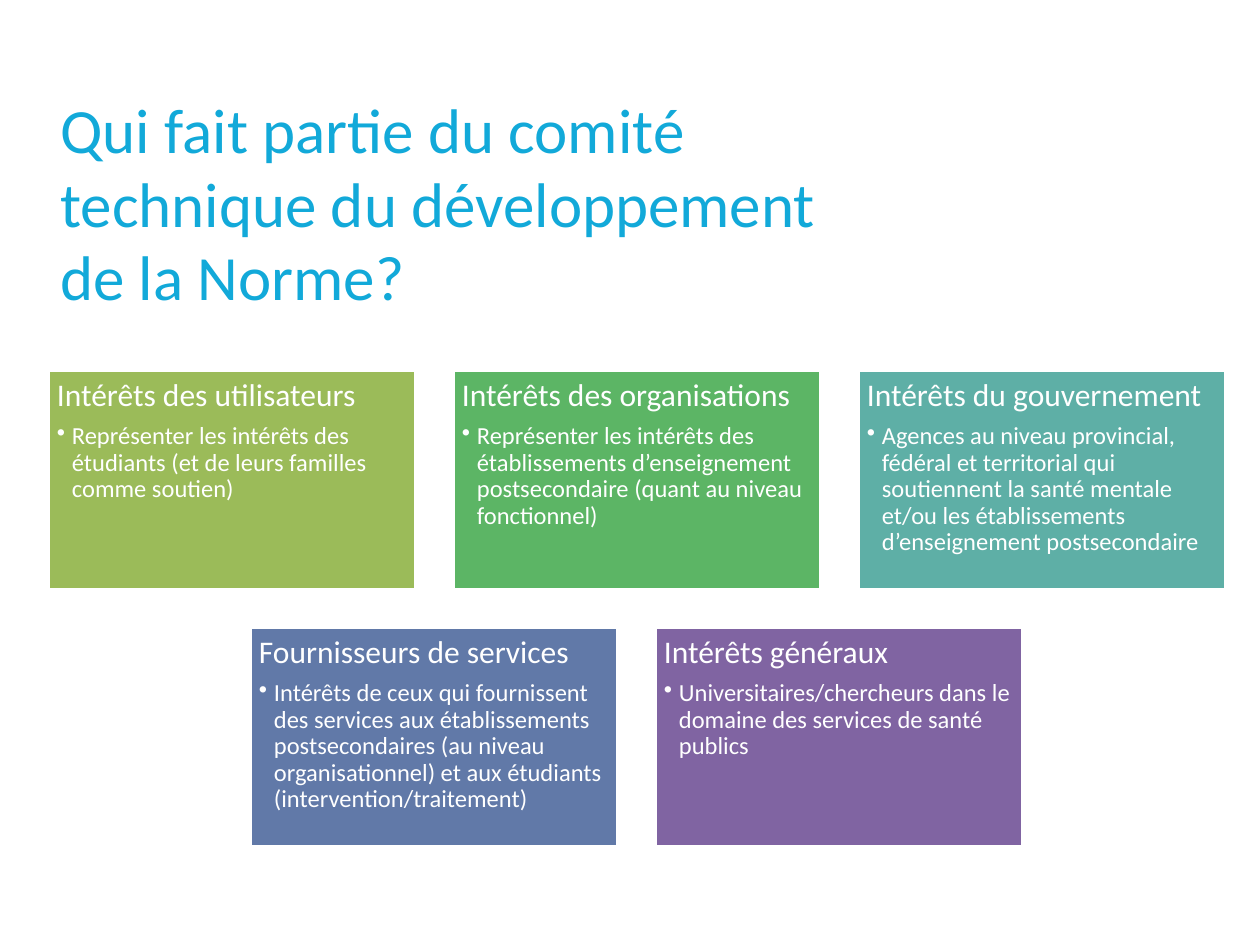
from lxml import etree
from pptx import Presentation
from pptx import util as u
from pptx.dml.color import RGBColor
from pptx.enum import shapes, text
from pptx.oxml.ns import qn

# Content
TITLE = "Qui fait partie du comité technique du développement de la Norme?"
ROWS = [
    [
        ("9BBB59", "Intérêts des utilisateurs",
         "Représenter les intérêts des étudiants (et de leurs familles comme soutien)"),
        ("5CB565", "Intérêts des organisations",
         "Représenter les intérêts des établissements d’enseignement "
         "postsecondaire (quant au niveau fonctionnel)"),
        ("5EAFA6", "Intérêts du gouvernement",
         "Agences au niveau provincial, fédéral et territorial qui soutiennent la santé "
         "mentale et/ou les établissements d’enseignement postsecondaire"),
    ],
    [
        ("6179A8", "Fournisseurs de services",
         "Intérêts de ceux qui fournissent des services aux établissements postsecondaires "
         "(au niveau organisationnel) et aux étudiants (intervention/traitement)"),
        ("8064A2", "Intérêts généraux",
         "Universitaires/chercheurs dans le domaine des services de santé publics"),
    ],
]

# Layout in px
PX = 914400 // 126
LEFT, TOP = 48, 370
CARD_W, CARD_H, GAP = 368, 220, 37
PADDING, INDENT = 9, 15


def px(n):
    return u.Emu(n * PX)


def color(value):
    return RGBColor.from_string(value)


def style(paragraph, size, value):
    paragraph.alignment = text.PP_ALIGN.LEFT
    paragraph.font.name = "Calibri"
    paragraph.font.size = u.Pt(size)
    paragraph.font.color.rgb = color(value)


def add_bullet(paragraph):
    props = paragraph._p.get_or_add_pPr()
    props.set("marL", str(px(INDENT)))
    props.set("indent", str(-px(INDENT)))
    etree.SubElement(props, qn("a:buChar"), char="•")


def add_card(slide, x, y, fill, heading, detail):
    card = slide.shapes.add_shape(
        shapes.MSO_SHAPE.RECTANGLE, px(x), px(y), px(CARD_W), px(CARD_H))
    card.shadow.inherit = False
    card.fill.solid()
    card.fill.fore_color.rgb = color(fill)
    card.line.color.rgb = color("FFFFFF")
    card.line.width = u.Pt(2)
    frame = card.text_frame
    frame.word_wrap = True
    frame.vertical_anchor = text.MSO_ANCHOR.TOP
    frame.margin_left = frame.margin_right = px(PADDING)
    frame.margin_top = frame.margin_bottom = px(PADDING)
    frame.text = f"{heading}\n{detail}"
    heading_line, detail_line = frame.paragraphs
    add_bullet(detail_line)
    for paragraph, size, after in ((heading_line, 18, 6), (detail_line, 14, 2)):
        style(paragraph, size, "FFFFFF")
        paragraph.line_spacing = 0.9
        paragraph.space_after = u.Pt(after)


deck = Presentation()
deck.slide_width, deck.slide_height = px(1260), px(945)
slide = deck.slides.add_slide(deck.slide_layouts[6])

# Title
title = slide.shapes.add_textbox(px(LEFT), px(79), px(819), px(236)).text_frame
title.word_wrap = True
title.vertical_anchor = text.MSO_ANCHOR.BOTTOM
title.margin_bottom = 0
title.text = TITLE
style(title.paragraphs[0], 36, "12A9D9")
title.paragraphs[0].line_spacing = 0.97

# Interest groups, each row centred under the widest one
columns = max(len(row) for row in ROWS)
for r, row in enumerate(ROWS):
    row_left = LEFT + (columns - len(row)) * (CARD_W + GAP) // 2
    for c, group in enumerate(row):
        add_card(slide, row_left + c * (CARD_W + GAP), TOP + r * (CARD_H + GAP), *group)

deck.save("out.pptx")
